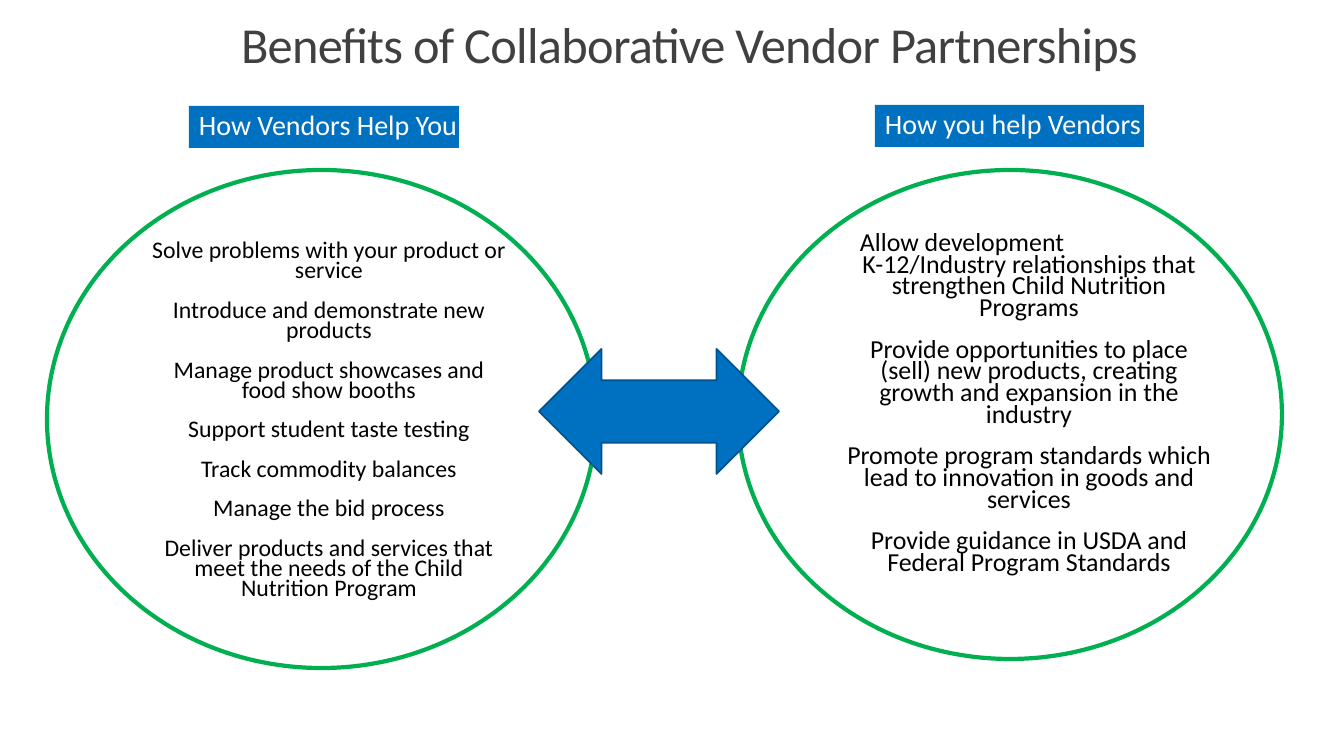
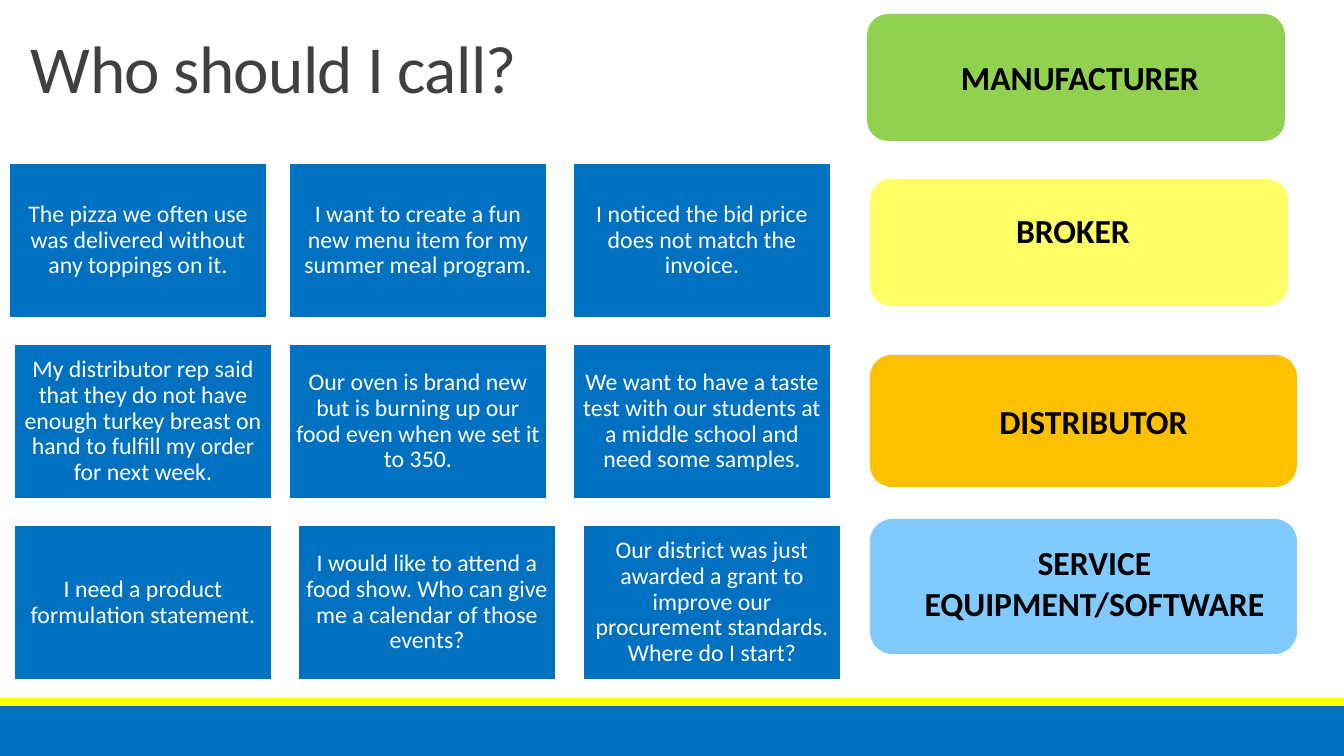
from dataclasses import dataclass
from typing import Any, Optional

from pptx import Presentation
from pptx.dml.color import RGBColor
from pptx.enum.shapes import MSO_SHAPE
from pptx.enum.text import MSO_ANCHOR, PP_ALIGN
from pptx.util import Pt

RECT = MSO_SHAPE.RECTANGLE
ROUNDED = MSO_SHAPE.ROUNDED_RECTANGLE
CIRCLE = MSO_SHAPE.FLOWCHART_CONNECTOR
DOUBLE_ARROW = MSO_SHAPE.LEFT_RIGHT_ARROW
LEFT, CENTER = PP_ALIGN.LEFT, PP_ALIGN.CENTER
TOP, MIDDLE, BOTTOM = MSO_ANCHOR.TOP, MSO_ANCHOR.MIDDLE, MSO_ANCHOR.BOTTOM

EMU_PER_PX = 914400 / 100.8
SLIDE_W, SLIDE_H = 1344, 756


@dataclass(frozen=True)
class Theme:
    font: str = "Calibri"
    blue: str = "0070C0"
    dark_blue: str = "00538E"
    green: str = "00B050"
    yellow: str = "FFFF00"
    white: str = "FFFFFF"
    black: str = "000000"
    grey: str = "404040"
    lime: str = "92D050"
    lemon: str = "FFFF66"
    amber: str = "FFC000"
    sky: str = "80CAFF"
    heading_size: float = 20
    card_size: float = 17
    role_size: float = 24


THEME = Theme()


@dataclass(frozen=True)
class Box:
    left: int
    top: int
    width: int
    height: int


@dataclass(frozen=True)
class TextStyle:
    size: float
    color: str
    bold: bool = False
    align: Any = LEFT
    anchor: Any = TOP
    line_spacing: float = 1.0
    space_after: float = 0
    insets: tuple[int, int, int, int] = (10, 5, 10, 5)
    tracking: int = 0


@dataclass(frozen=True)
class Line:
    text: str
    align: Any = None
    indent: int = 0
    space_after: Optional[float] = None


@dataclass(frozen=True)
class Side:
    heading: str
    heading_box: Box
    circle: Box
    list_box: Box
    list_size: float
    benefits: tuple[Line, ...]


@dataclass(frozen=True)
class CardRow:
    lefts: tuple[int, int, int]
    questions: tuple[str, str, str]


@dataclass(frozen=True)
class Role:
    name: str
    box: Box
    color: str
    shift_x: int = 0
    shift_up: int = 0


SIDES = (
    Side(
        "How Vendors Help You", Box(189, 106, 270, 42), Box(47, 170, 549, 498),
        Box(142, 238, 364, 372), 17,
        (
            Line("Solve problems with your product or service"),
            Line("Introduce and demonstrate new products"),
            Line("Manage product showcases and food show booths"),
            Line("Support student taste testing"),
            Line("Track commodity balances"),
            Line("Manage the bid process"),
            Line("Deliver products and services that meet the needs of the Child Nutrition Program"),
        ),
    ),
    Side(
        "How you help Vendors", Box(875, 105, 269, 42), Box(738, 170, 544, 489),
        Box(837, 229, 374, 372), 18.5,
        (
            Line("Allow development", LEFT, 13, 0),
            Line("K-12/Industry relationships that strengthen Child Nutrition Programs"),
            Line("Provide opportunities to place (sell) new products, creating growth "
                 "and expansion in the industry"),
            Line("Promote program standards which lead to innovation in goods and services"),
            Line("Provide guidance in USDA and Federal Program Standards"),
        ),
    ),
)

CARD_TOP, CARD_STEP, CARD_W, CARD_H = 163, 181, 258, 155
CARD_ROWS = (
    CardRow((9, 289, 573), (
        "The pizza we often use was delivered without any toppings on it.",
        "I want to create a fun new menu item for my summer meal program.",
        "I noticed the bid price does not match the invoice.",
    )),
    CardRow((14, 289, 573), (
        "My distributor rep said that they do not have enough turkey breast on hand "
        "to fulfill my order for next week.",
        "Our oven is brand new but is burning up our food even when we set it to 350.",
        "We want to have a taste test with our students at a middle school and need some samples.",
    )),
    CardRow((14, 298, 583), (
        "I need a product formulation statement.",
        "I would like to attend a food show. Who can give me a calendar of those events?",
        "Our district was just awarded a grant to improve our procurement standards. "
        "Where do I start?",
    )),
)

ROLES = (
    Role("MANUFACTURER", Box(867, 14, 418, 127), THEME.lime, shift_x=4),
    Role("BROKER", Box(870, 179, 418, 127), THEME.lemon, shift_x=-6, shift_up=12),
    Role("DISTRIBUTOR", Box(870, 355, 427, 132), THEME.amber, shift_x=10),
    Role("SERVICE EQUIPMENT/SOFTWARE", Box(870, 519, 427, 135), THEME.sky, shift_x=11, shift_up=4),
)


def px(length: int) -> int:
    return round(length * EMU_PER_PX)


def place(box: Box) -> tuple[int, ...]:
    return tuple(px(n) for n in (box.left, box.top, box.width, box.height))


def apply_format(target: Any, values: dict[str, Any]) -> None:
    for attribute, value in values.items():
        setattr(target, attribute, value)


def write(shape: Any, lines: tuple[Line, ...], style: TextStyle) -> None:
    left, top, right, bottom = (px(n) for n in style.insets)
    frame = shape.text_frame
    apply_format(frame, {
        "word_wrap": True, "vertical_anchor": style.anchor,
        "margin_left": left, "margin_top": top,
        "margin_right": right, "margin_bottom": bottom,
    })
    for number, line in enumerate(lines):
        paragraph = frame.add_paragraph() if number else frame.paragraphs[0]
        after = style.space_after if line.space_after is None else line.space_after
        apply_format(paragraph, {
            "alignment": line.align or style.align,
            "line_spacing": style.line_spacing,
            "space_before": Pt(0), "space_after": Pt(after),
        })
        if line.indent:
            paragraph._p.get_or_add_pPr().set("marL", str(px(line.indent)))
        run = paragraph.add_run()
        run.text = line.text
        apply_format(run.font, {"name": THEME.font, "size": Pt(style.size), "bold": style.bold})
        run.font.color.rgb = RGBColor.from_string(style.color)
        if style.tracking:
            run._r.get_or_add_rPr().set("spc", str(style.tracking))


def add_panel(slide: Any, kind: Any, box: Box, fill: Optional[str] = None,
              outline: Optional[str] = None, outline_width: float = 1.25) -> Any:
    panel = slide.shapes.add_shape(kind, *place(box))
    panel.shadow.inherit = False
    if fill:
        panel.fill.solid()
        panel.fill.fore_color.rgb = RGBColor.from_string(fill)
    else:
        panel.fill.background()
    if outline:
        panel.line.color.rgb = RGBColor.from_string(outline)
        panel.line.width = Pt(outline_width)
    else:
        panel.line.fill.background()
    return panel


def add_text(slide: Any, box: Box, lines: tuple[Line, ...], style: TextStyle) -> None:
    write(slide.shapes.add_textbox(*place(box)), lines, style)


def add_title(slide: Any, title: str, box: Box, size: float) -> None:
    style = TextStyle(size, THEME.grey, anchor=BOTTOM, line_spacing=0.85, tracking=-50)
    add_text(slide, box, (Line(title),), style)


def add_footer_bands(slide: Any) -> None:
    add_panel(slide, RECT, Box(0, 706, SLIDE_W, 50), THEME.blue)
    add_panel(slide, RECT, Box(0, 698, SLIDE_W, 8), THEME.yellow)


def add_side(slide: Any, side: Side) -> None:
    insets = (10, 5, 0, 5)
    heading = add_panel(slide, RECT, side.heading_box, THEME.blue)
    write(heading, (Line(side.heading),),
          TextStyle(THEME.heading_size, THEME.white, line_spacing=0.9, insets=insets))
    add_panel(slide, CIRCLE, side.circle, outline=THEME.green, outline_width=3)
    add_text(slide, side.list_box, side.benefits,
             TextStyle(side.list_size, THEME.black, align=CENTER, line_spacing=0.7,
                       space_after=14, insets=insets))


def add_card(slide: Any, question: str, box: Box) -> None:
    card = add_panel(slide, RECT, box, THEME.blue, THEME.white)
    write(card, (Line(question),),
          TextStyle(THEME.card_size, THEME.white, align=CENTER, anchor=MIDDLE,
                    line_spacing=0.9, insets=(7, 7, 7, 7)))


def add_role(slide: Any, role: Role) -> None:
    """Draw a role button, its label moved off centre by uneven insets."""
    button = add_panel(slide, ROUNDED, role.box, role.color)
    insets = (max(0, 2 * role.shift_x), 0, max(0, -2 * role.shift_x), 2 * role.shift_up)
    write(button, (Line(role.name),),
          TextStyle(THEME.role_size, THEME.black, bold=True, align=CENTER,
                    anchor=MIDDLE, insets=insets))


def build_benefits(slide: Any) -> None:
    add_title(slide, "Benefits of Collaborative Vendor Partnerships", Box(231, 11, 952, 68), 36)
    for side in SIDES:
        add_side(slide, side)
    add_panel(slide, DOUBLE_ARROW, Box(539, 349, 240, 125), THEME.blue, THEME.dark_blue)


def build_who_to_call(slide: Any) -> None:
    add_footer_bands(slide)
    add_title(slide, "Who should I call?", Box(21, 30, 552, 82), 48)
    for number, row in enumerate(CARD_ROWS):
        for left, question in zip(row.lefts, row.questions):
            add_card(slide, question, Box(left, CARD_TOP + number * CARD_STEP, CARD_W, CARD_H))
    for role in ROLES:
        add_role(slide, role)


def main() -> None:
    deck = Presentation()
    apply_format(deck, {"slide_width": px(SLIDE_W), "slide_height": px(SLIDE_H)})
    blank = deck.slide_layouts[6]
    for build in (build_benefits, build_who_to_call):
        build(deck.slides.add_slide(blank))
    deck.save("out.pptx")


if __name__ == "__main__":
    main()
